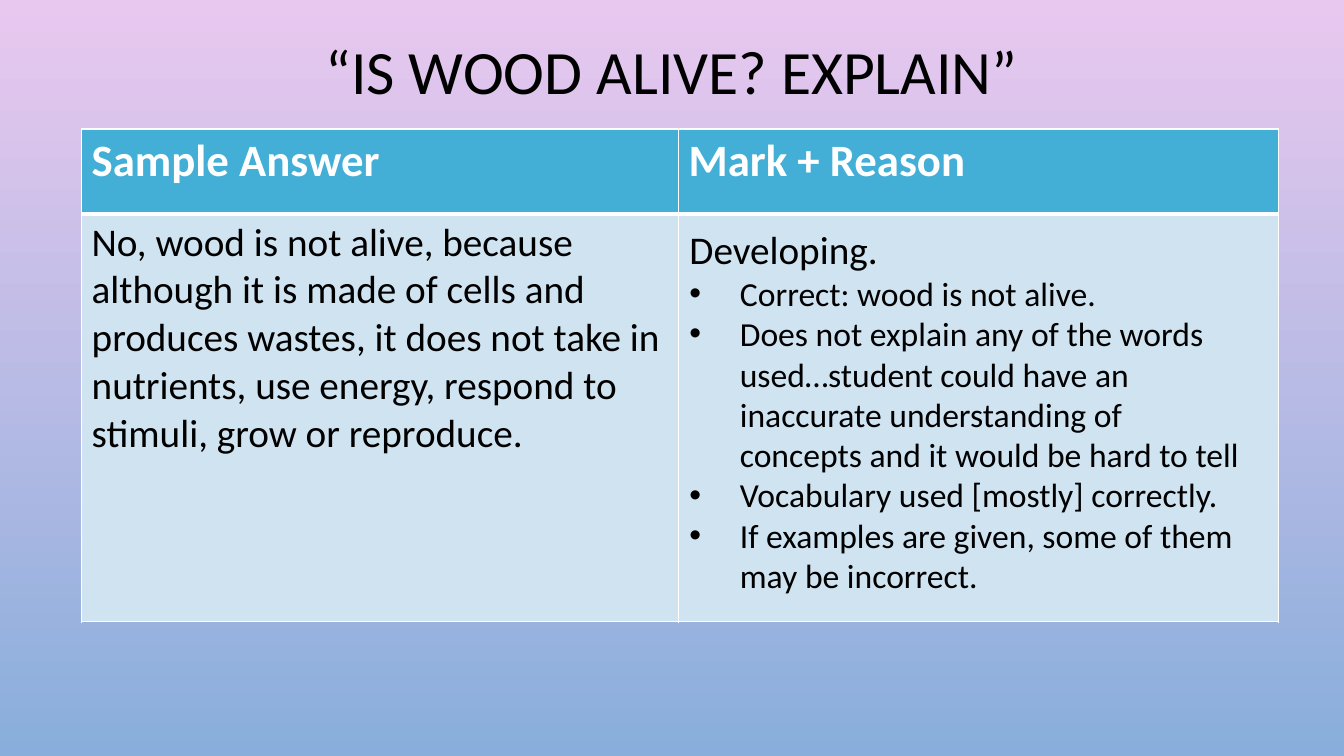
from lxml import etree
from pptx import Presentation
from pptx.dml.color import RGBColor
from pptx.enum.text import MSO_ANCHOR, MSO_AUTO_SIZE, PP_ALIGN
from pptx.oxml.ns import qn
from pptx.util import Inches, Pt

FONT = "Calibri"
WHITE = "FFFFFF"
BLACK = "000000"


def color(hex_code):
    return RGBColor.from_string(hex_code)


def style(paragraph, size, hex_code, bold=False):
    for run in paragraph.runs:
        run.font.name = FONT
        run.font.size = Pt(size)
        run.font.bold = bold
        run.font.color.rgb = color(hex_code)


prs = Presentation()
prs.slide_width = Inches(13.33)
prs.slide_height = Inches(7.5)
slide = prs.slides.add_slide(prs.slide_layouts[5])

# Background, pink at the top to blue at the bottom
backdrop = slide.background.fill
backdrop.gradient()
backdrop.gradient_angle = 270
for stop, hex_code in zip(backdrop.gradient_stops, ("E9C8EF", "89AEDB")):
    stop.color.rgb = color(hex_code)

# Title
title = slide.shapes.title
title.left, title.top = Inches(1), Inches(-0.14)
title.width, title.height = Inches(11.33), Inches(1.75)
title.text_frame.text = "“IS WOOD ALIVE? EXPLAIN”"
title.text_frame.vertical_anchor = MSO_ANCHOR.MIDDLE
question = title.text_frame.paragraphs[0]
question.alignment = PP_ALIGN.CENTER
question.line_spacing = 0.9
style(question, 44, BLACK)

# Answer table
answers = slide.shapes.add_table(
    2, 2, Inches(0.81), Inches(1.28), Inches(11.87), Inches(4.89)).table
for column, width in zip(answers.columns, (5.92, 5.95)):
    column.width = Inches(width)

rows = [
    (0.84, "43AFD6", 32, WHITE, True, ("Sample Answer", "Mark + Reason")),
    (4.05, "CFE3F0", 28, BLACK, False, (
        "No, wood is not alive, because although it is made of cells and "
        "produces wastes, it does not take in nutrients, use energy, "
        "respond to stimuli, grow or reproduce.", "")),
]
for r, (height, fill, size, ink, bold, texts) in enumerate(rows):
    answers.rows[r].height = Inches(height)
    for c, text in enumerate(texts):
        cell = answers.cell(r, c)
        cell.text_frame.text = text
        style(cell.text_frame.paragraphs[0], size, ink, bold)
        # Thin white borders, with a thick rule under the header
        rule = 3 if r == 0 else 1
        borders = {"L": 1, "R": 1, "T": 4 - rule if r else 1, "B": rule}
        for side, points in borders.items():
            line = etree.SubElement(cell._tc.get_or_add_tcPr(),
                                    qn(f"a:ln{side}"), w=str(Pt(points)))
            paint = etree.SubElement(line, qn("a:solidFill"))
            etree.SubElement(paint, qn("a:srgbClr"), val=WHITE)
        cell.fill.solid()
        cell.fill.fore_color.rgb = color(fill)

# Mark and reasons, over the empty cell
marking = slide.shapes.add_textbox(
    Inches(6.74), Inches(2.19), Inches(5.7), Inches(3.8)).text_frame
marking.word_wrap = True
marking.auto_size = MSO_AUTO_SIZE.SHAPE_TO_FIT_TEXT
marking.text = "Developing."
style(marking.paragraphs[0], 28, BLACK)

reasons = [
    "Correct: wood is not alive.",
    "Does not explain any of the words used…student could have an "
    "inaccurate understanding of concepts and it would be hard to tell",
    "Vocabulary used [mostly] correctly.",
    "If examples are given, some of them may be incorrect.",
]
for reason in reasons:
    bullet = marking.add_paragraph()
    bullet.text = reason
    props = bullet._p.get_or_add_pPr()
    props.set("marL", str(Inches(0.5)))
    props.set("indent", str(Inches(-0.5)))
    etree.SubElement(props, qn("a:buFont"), typeface="Arial")
    etree.SubElement(props, qn("a:buChar"), char="•")
    style(bullet, 24, BLACK)

prs.save("out.pptx")
